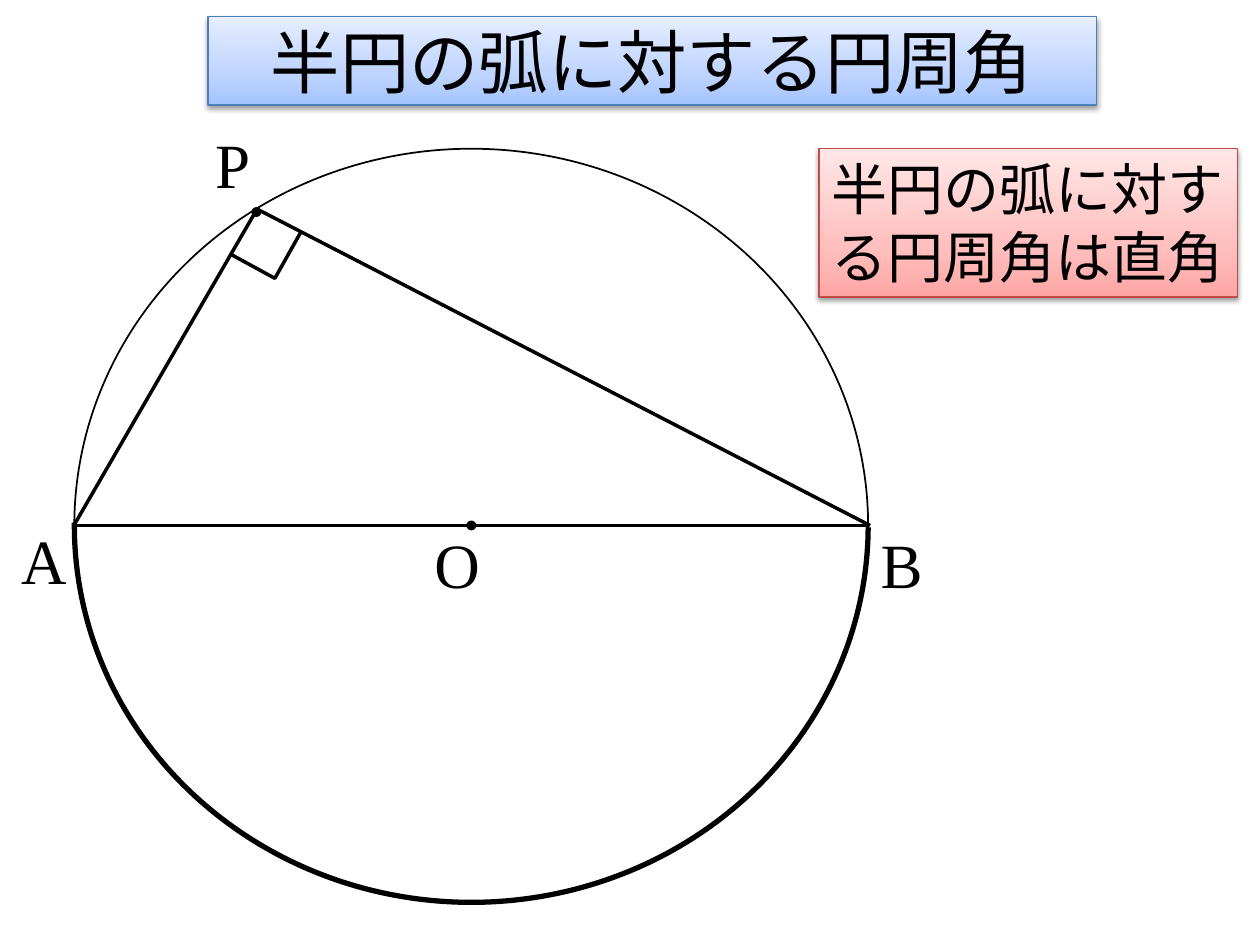
from lxml import etree
from pptx import Presentation
from pptx.dml.color import RGBColor
from pptx.enum.lang import MSO_LANGUAGE_ID
from pptx.enum.shapes import MSO_CONNECTOR, MSO_SHAPE
from pptx.enum.text import MSO_ANCHOR, MSO_AUTO_SIZE, PP_ALIGN
from pptx.oxml import parse_xml
from pptx.oxml.ns import nsdecls, qn
from pptx.util import Pt

COLORS = {"ink": "000000", "blue line": "4B7EBC", "red line": "BF4C48"}
GRADIENTS = {
    "blue": [(0, "A4C4FF"), (35, "BFD4FF"), (100, "E6EEFF")],
    "red": [(0, "FFA6A5"), (35, "FFC0BF"), (100, "FFE7E7")],
}

# Boxes are left, top, width, height in points.
TITLE = ("半円の弧に対する円周角", (118.8, 9.4, 507.6, 50.6))
THEOREM = ("半円の弧に対する円周角は直角", (468, 85, 239.2, 84.8))
CIRCLE = (42.5, 85, 453.6, 430.6)
LABELS = [
    ("O", (241.2, 296.6, 38.9, 50.9)),
    ("B", (496.1, 296.6, 36.7, 50.9)),
    ("A", (5, 294.5, 37.4, 50.9)),
    ("P", (115.9, 68.4, 35.3, 50.9)),
]
DOT_SIZE = 3.6
CENTER = (CIRCLE[0] + CIRCLE[2] / 2, CIRCLE[1] + CIRCLE[3] / 2)
POINT_P = (146.5, 121.2)
DIAMETER = [(CIRCLE[0] + CIRCLE[2], CENTER[1]), (CIRCLE[0], CENTER[1])]
INSCRIBED_ANGLE = [(42.5, 299.8), (146.9, 119.5), (497.2, 300.3)]
RIGHT_ANGLE_MARK = [(131.2, 145), (157.1, 159.1), (172, 132.5)]


def points(values):
    return [Pt(value) for value in values]


def set_line(shape, width, color="ink"):
    shape.line.width = Pt(width)
    shape.line.color.rgb = RGBColor.from_string(COLORS[color])


def write(shape, text, size, font="Calibri", align=PP_ALIGN.LEFT, **frame_format):
    frame = shape.text_frame
    for name, value in frame_format.items():
        setattr(frame, name, value)
    paragraph = frame.paragraphs[0]
    paragraph.alignment = align
    run = paragraph.add_run()
    run.text = text
    run_format = {"size": Pt(size), "name": font,
                  "language_id": MSO_LANGUAGE_ID.JAPANESE}
    for name, value in run_format.items():
        setattr(run.font, name, value)
    run.font.color.rgb = RGBColor.from_string(COLORS["ink"])


def style_panel(shape, hue):
    """Give a box its upward gradient, thin outline and soft shadow."""
    set_line(shape, 0.75, f"{hue} line")
    stops = "".join(
        f'<a:gs pos="{position * 1000}"><a:srgbClr val="{color}"/></a:gs>'
        for position, color in GRADIENTS[hue])
    gradient = parse_xml(
        f'<a:gradFill {nsdecls("a")} rotWithShape="1"><a:gsLst>{stops}</a:gsLst>'
        '<a:lin ang="16200000" scaled="0"/></a:gradFill>')
    shadow = parse_xml(
        f'<a:effectLst {nsdecls("a")}><a:outerShdw blurRad="{Pt(3.1)}" '
        f'dist="{Pt(1.6)}" dir="5400000" rotWithShape="0">'
        f'<a:srgbClr val="{COLORS["ink"]}"><a:alpha val="38000"/></a:srgbClr>'
        '</a:outerShdw></a:effectLst>')
    line = shape.line._get_or_add_ln()
    line.addprevious(gradient)
    line.addnext(shadow)


def add_shape(slide, kind, box):
    shape = slide.shapes.add_shape(kind, *points(box))
    shape.shadow.inherit = False
    shape.fill.background()
    return shape


def add_dot(slide, center):
    corner = [value - DOT_SIZE / 2 for value in center]
    dot = add_shape(slide, MSO_SHAPE.OVAL, (*corner, DOT_SIZE, DOT_SIZE))
    dot.fill.solid()
    dot.fill.fore_color.rgb = RGBColor.from_string(COLORS["ink"])
    set_line(dot, 2)


def add_open_path(slide, vertices):
    start, *rest = [points(vertex) for vertex in vertices]
    builder = slide.shapes.build_freeform(*start)
    builder.add_line_segments(rest, close=False)
    path = builder.convert_to_shape()
    path.shadow.inherit = False
    path.fill.background()
    set_line(path, 2)


def add_panels(slide):
    text, box = TITLE
    title = slide.shapes.title
    for name, value in zip(("left", "top", "width", "height"), points(box)):
        setattr(title, name, value)
    style_panel(title, "blue")
    write(title, text, 39.6, align=PP_ALIGN.CENTER, word_wrap=True,
          vertical_anchor=MSO_ANCHOR.MIDDLE, auto_size=MSO_AUTO_SIZE.NONE)

    text, box = THEOREM
    theorem = slide.shapes.add_shape(MSO_SHAPE.RECTANGLE, *points(box))
    style_panel(theorem, "red")
    write(theorem, text, 32, word_wrap=True, vertical_anchor=MSO_ANCHOR.TOP,
          auto_size=MSO_AUTO_SIZE.SHAPE_TO_FIT_TEXT)


def add_figure(slide):
    set_line(add_shape(slide, MSO_SHAPE.OVAL, CIRCLE), 1)
    semicircle = add_shape(slide, MSO_SHAPE.ARC, CIRCLE)
    semicircle.rotation = 180
    semicircle.adjustments[0] = 108.15
    semicircle.adjustments[1] = 0.26
    set_line(semicircle, 3)

    for center in (CENTER, POINT_P):
        add_dot(slide, center)
    for text, box in LABELS:
        label = slide.shapes.add_textbox(*points(box))
        write(label, text, 36, "Times New Roman", word_wrap=False,
              auto_size=MSO_AUTO_SIZE.SHAPE_TO_FIT_TEXT)

    start, end = DIAMETER
    diameter = slide.shapes.add_connector(
        MSO_CONNECTOR.STRAIGHT, *points(start), *points(end))
    set_line(diameter, 2.25)
    etree.SubElement(diameter._element.spPr, qn("a:effectLst"))
    for vertices in (INSCRIBED_ANGLE, RIGHT_ANGLE_MARK):
        add_open_path(slide, vertices)


def main():
    presentation = Presentation()
    presentation.slide_width, presentation.slide_height = points((720, 540))
    slide = presentation.slides.add_slide(presentation.slide_layouts[5])
    add_panels(slide)
    add_figure(slide)
    presentation.save("out.pptx")


if __name__ == "__main__":
    main()
